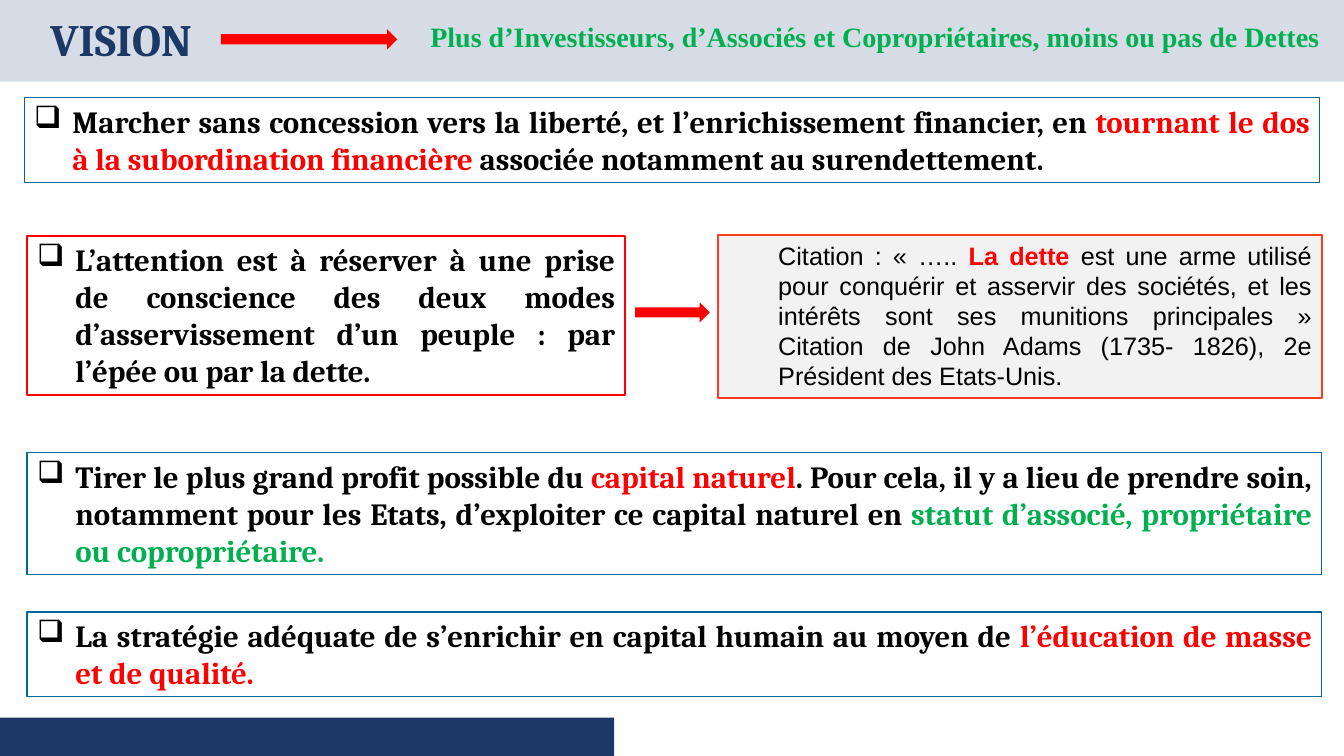
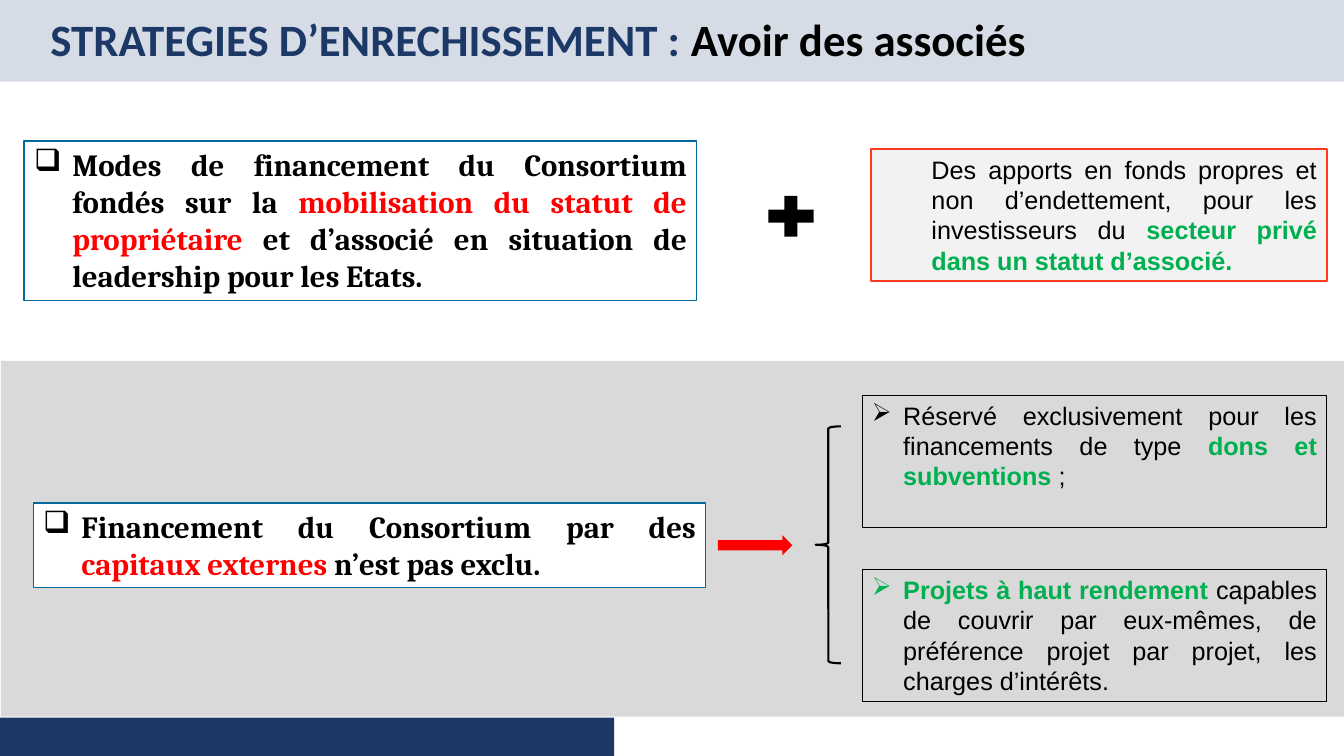
from lxml.etree import SubElement
from pptx import Presentation
from pptx.dml.color import RGBColor
from pptx.enum.shapes import MSO_SHAPE
from pptx.enum.text import MSO_ANCHOR, MSO_AUTO_SIZE, PP_ALIGN
from pptx.oxml.ns import qn
from pptx.util import Inches, Pt

COLORS = {
    "navy": "1C3867", "band": "D6DCE5", "panel": "D9D9D9", "quote": "F2F2F2",
    "blue": "00689D", "orange": "FF3A21", "red": "FF0000", "green": "00B050",
    "black": "000000", "white": "FFFFFF",
}

# Box styles: fill, outline, text format, hanging indent and bullet
POINT = dict(fill="white", line="blue", weight=1, font="Cambria", size=22,
             bold=True, margin=0.38, indent=-0.38, bullet="❑")
WARNING = {**POINT, "line": "red"}
QUOTE = dict(fill="quote", line="orange", weight=1.5, font="Arial", size=18,
             bold=False, margin=0.5, indent=0, bullet=None)
OPTION = dict(fill=None, line="black", weight=0.75, font="Arial", size=18,
              bold=False, margin=0.31, indent=-0.31, bullet="➢")


def rgb(name):
    return RGBColor.from_string(COLORS[name])


def write(paragraph, text, *, font, size, color="black", bold=True):
    run = paragraph.add_run()
    run.text = text
    run.font.name = font
    run.font.size = Pt(size)
    run.font.bold = bold
    run.font.color.rgb = rgb(color)


class Deck:
    def __init__(self):
        self.file = Presentation()
        self.file.slide_width = Inches(13.33)
        self.file.slide_height = Inches(7.5)
        self.layout = self.file.slide_layouts[5]
        self.slide = None

    def new_slide(self, title, font):
        first = self.slide is None
        self.slide = self.file.slides.add_slide(self.layout)
        if first:
            self.add_bands()
        heading = self.slide.shapes.title
        heading.left, heading.top = Inches(0.4), Inches(0.1)
        heading.width, heading.height = Inches(12.52), Inches(0.64)
        paragraph = self.prepare(heading.text_frame, MSO_ANCHOR.MIDDLE, PP_ALIGN.LEFT)
        paragraph.line_spacing = 0.9
        for text, color in title:
            write(paragraph, text, font=font, size=32, color=color)

    def add_bands(self):
        """Place the header and footer bands on the layout, behind its text."""
        header = self.shape(MSO_SHAPE.RECTANGLE, 0, 0, 13.33, 0.81, fill="band")
        footer = self.shape(MSO_SHAPE.RECTANGLE, 0, 7.12, 6.09, 0.38, fill="navy")
        for band in (footer, header):
            self.layout.shapes.element.insert(2, band.element)

    def prepare(self, frame, anchor, align):
        frame.word_wrap = True
        frame.auto_size = MSO_AUTO_SIZE.NONE
        frame.vertical_anchor = anchor
        paragraph = frame.paragraphs[0]
        paragraph.alignment = align
        return paragraph

    def shape(self, kind, left, top, width, height, fill=None, line=None, weight=1):
        shape = self.slide.shapes.add_shape(
            kind, Inches(left), Inches(top), Inches(width), Inches(height))
        shape.shadow.inherit = False
        if fill:
            shape.fill.solid()
            shape.fill.fore_color.rgb = rgb(fill)
        else:
            shape.fill.background()
        if line:
            shape.line.color.rgb = rgb(line)
            shape.line.width = Pt(weight)
        else:
            shape.line.fill.background()
        return shape

    def box(self, left, top, width, height, runs, style):
        box = self.shape(MSO_SHAPE.RECTANGLE, left, top, width, height,
                         style["fill"], style["line"], style["weight"])
        paragraph = self.prepare(box.text_frame, MSO_ANCHOR.TOP, PP_ALIGN.JUSTIFY)
        properties = paragraph._p.get_or_add_pPr()
        properties.set("marL", str(Inches(style["margin"])))
        properties.set("indent", str(Inches(style["indent"])))
        if style["bullet"]:
            SubElement(properties, qn("a:buChar")).set("char", style["bullet"])
        for text, color in runs:
            write(paragraph, text, font=style["font"], size=style["size"],
                  color=color, bold=style["bold"] or color != "black")

    def label(self, left, top, width, height, text, **style):
        label = self.slide.shapes.add_textbox(
            Inches(left), Inches(top), Inches(width), Inches(height))
        paragraph = self.prepare(label.text_frame, MSO_ANCHOR.TOP, PP_ALIGN.JUSTIFY)
        write(paragraph, text, **style)

    def arrow(self, left, top, width=0.74):
        self.shape(MSO_SHAPE.RIGHT_ARROW, left, top, width, 0.2, fill="red")


def add_vision(deck):
    deck.new_slide([("VISION", "navy")], "Cambria")
    deck.arrow(2.19, 0.29, 1.75)
    deck.label(4.17, 0.14, 9.1, 0.44,
               "Plus d’Investisseurs, d’Associés et Copropriétaires, moins ou pas de Dettes",
               font="Times New Roman", size=20, color="green")

    # Freedom from debt
    deck.box(0.24, 0.97, 12.85, 0.84, [
        ("Marcher sans concession vers la liberté, et l’enrichissement financier, en ", "black"),
        ("tournant le dos à la subordination financière", "red"),
        (" associée notamment au surendettement.", "black")], POINT)

    # Two modes of subjugation and the supporting quotation
    deck.box(0.27, 2.34, 5.93, 1.58, [
        ("L’attention est à réserver à une prise de conscience des deux modes "
         "d’asservissement d’un peuple : par l’épée ou par la dette.", "black")], WARNING)
    deck.arrow(6.3, 3)
    deck.box(7.12, 2.33, 5.99, 1.62, [
        ("Citation : « …..", "black"),
        (" La dette ", "red"),
        ("est une arme utilisé pour conquérir et asservir des sociétés, et les intérêts "
         "sont ses munitions principales » Citation de John Adams (1735- 1826), "
         "2e Président des Etats-Unis.", "black")], QUOTE)

    # Natural and human capital
    deck.box(0.27, 4.49, 12.84, 1.21, [
        ("Tirer le plus grand profit possible du ", "black"),
        ("capital naturel", "red"),
        (". Pour cela, il y a lieu de prendre soin, notamment pour les Etats, "
         "d’exploiter ce capital naturel en ", "black"),
        ("statut d’associé, propriétaire ou copropriétaire.", "green")], POINT)
    deck.box(0.27, 6.07, 12.84, 0.84, [
        ("La stratégie adéquate de s’enrichir en capital humain au moyen de ", "black"),
        ("l’éducation de masse et de qualité.", "red")], POINT)


def add_strategies(deck):
    deck.new_slide([("STRATEGIES D’ENRECHISSEMENT : ", "navy"),
                    ("Avoir des associés", "black")], "Calibri")

    # Ownership plus equity
    deck.box(0.24, 1.4, 6.67, 1.58, [
        ("Modes de financement du Consortium fondés sur la ", "black"),
        ("mobilisation du statut de propriétaire ", "red"),
        ("et d’associé en situation de leadership pour les Etats.", "black")], POINT)
    deck.shape(MSO_SHAPE.MATH_PLUS, 7.54, 1.87, 0.61, 0.55, fill="black")
    deck.box(8.64, 1.48, 4.52, 1.31, [
        ("Des apports en fonds propres et non d’endettement, pour les investisseurs du ", "black"),
        ("secteur privé dans un statut d’associé.", "green")], QUOTE)

    # External capital and its two uses
    deck.shape(MSO_SHAPE.RECTANGLE, 0.01, 3.58, 13.32, 3.53, fill="panel")
    deck.box(0.33, 4.99, 6.67, 0.84, [
        ("Financement du Consortium par des ", "black"),
        ("capitaux externes", "red"),
        (" n’est pas exclu.", "black")], POINT)
    deck.arrow(7.12, 5.31)
    deck.shape(MSO_SHAPE.LEFT_BRACE, 8.09, 4.23, 0.25, 2.35, line="black", weight=1.5)
    uses = [
        [("Réservé exclusivement pour les financements de type ", "black"),
         ("dons et subventions ", "green"), (";", "black")],
        [("Projets à haut rendement ", "green"),
         ("capables de couvrir par eux-mêmes, de préférence projet par projet, "
          "les charges d’intérêts.", "black")],
    ]
    for row, use in enumerate(uses):
        deck.box(8.55, 3.92 + 1.73 * row, 4.61, 1.31, use, OPTION)


def main():
    deck = Deck()
    add_vision(deck)
    add_strategies(deck)
    deck.file.save("out.pptx")


if __name__ == "__main__":
    main()
